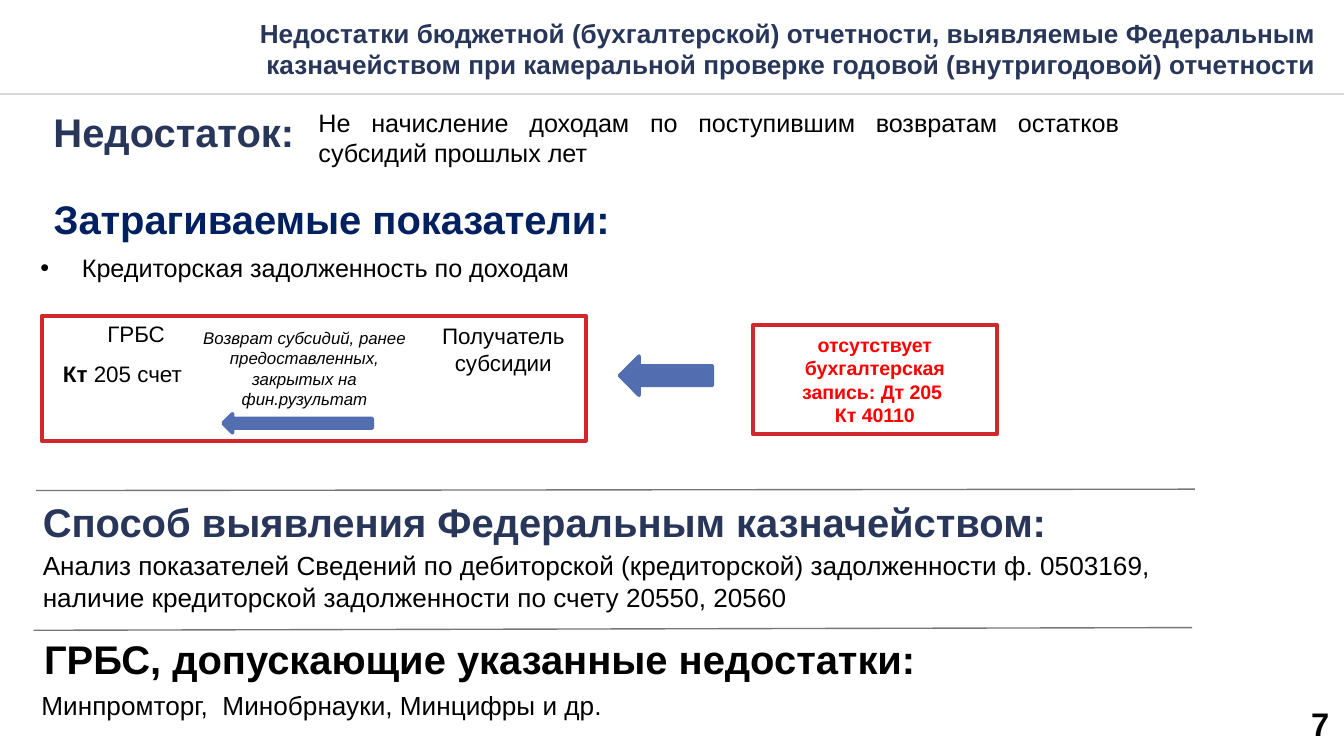
from dataclasses import dataclass

from lxml import etree
from pptx import Presentation
from pptx.dml.color import RGBColor
from pptx.enum.shapes import MSO_CONNECTOR as CONN, MSO_SHAPE as SHAPE
from pptx.enum.text import MSO_ANCHOR as ANCHOR, PP_ALIGN as ALIGN
from pptx.oxml.ns import qn
from pptx.util import Inches, Pt


@dataclass(frozen=True)
class Theme:
    font: str = "Arial"
    # Colours
    black: str = "000000"
    white: str = "FFFFFF"
    navy: str = "283659"
    deep_blue: str = "002060"
    blue: str = "526DB0"
    frame: str = "D1282E"
    alert: str = "FF0000"
    rule: str = "777777"
    header_rule: str = "D9D9D9"
    # Type sizes
    heading: float = 21.4
    number: float = 17.5
    body: float = 14
    lead: float = 13.5
    label: float = 12
    warning: float = 10.5
    note: float = 9


T = Theme()
PAD = (0.1, 0.05)
NO_PAD = (0, 0)


def rgb(value):
    return RGBColor.from_string(value)


def write(sp, paragraphs, size=T.body, color=T.black, align=ALIGN.LEFT,
          pad=PAD, wrap=True, anchor=ANCHOR.TOP, bullet=False, **style):
    """Fill a shape; a paragraph is a string or a list of (text, format) runs."""
    tf = sp.text_frame
    x, y = (Inches(v) for v in pad)
    frame = dict(margin_left=x, margin_right=x, margin_top=y, margin_bottom=y,
                 word_wrap=wrap, vertical_anchor=anchor)
    for name, value in frame.items():
        setattr(tf, name, value)
    for i, content in enumerate(paragraphs):
        p = tf.paragraphs[0] if i == 0 else tf.add_paragraph()
        p.alignment = align
        if bullet:
            add_bullet(p)
        runs = [(content, {})] if isinstance(content, str) else content
        for text, extra in runs:
            fmt = dict(name=T.font, size=Pt(size), **{**style, **extra})
            add_run(p, text, color, fmt)


def add_run(p, text, color, fmt):
    """Add formatted text; a newline becomes a line break."""
    for i, line in enumerate(text.split("\n")):
        if i:
            p.add_line_break()
        r = p.add_run()
        r.text = line
        for name, value in fmt.items():
            setattr(r.font, name, value)
        r.font.color.rgb = rgb(color)


def add_bullet(p, indent=0.31):
    pPr = p._p.get_or_add_pPr()
    pPr.set("marL", str(Inches(indent)))
    pPr.set("indent", str(-Inches(indent)))
    etree.SubElement(pPr, qn("a:buFont")).set("typeface", T.font)
    etree.SubElement(pPr, qn("a:buChar")).set("char", "•")


def add_text(s, box, *paragraphs, **fmt):
    sp = s.shapes.add_textbox(*map(Inches, box))
    write(sp, paragraphs, **fmt)


def add_heading(s, box, text, color=T.navy, **fmt):
    add_text(s, box, text, size=T.heading, color=color, bold=True, **fmt)


def add_box(s, kind, box, fill=None, line=None):
    sp = s.shapes.add_shape(kind, *map(Inches, box))
    sp.shadow.inherit = False
    if fill:
        sp.fill.solid()
        sp.fill.fore_color.rgb = rgb(fill)
    else:
        sp.fill.background()
    if line:
        sp.line.color.rgb = rgb(line)
        sp.line.width = Pt(2)
    else:
        sp.line.fill.background()
    return sp


def add_arrow(s, box):
    add_box(s, SHAPE.LEFT_ARROW, box, T.blue, T.blue)


def add_rule(s, x1, y1, x2, y2, color=T.rule, width=0.75):
    cx = s.shapes.add_connector(CONN.STRAIGHT, *map(Inches, (x1, y1, x2, y2)))
    cx.line.color.rgb = rgb(color)
    cx.line.width = Pt(width)
    etree.SubElement(cx._element.spPr, qn("a:effectLst"))


def add_header(s):
    add_rule(s, 0, 0.7, 10, 0.7, T.header_rule, 1)
    add_text(s, (1.66, 0.08, 8.23, 0.57),
             "Недостатки бюджетной (бухгалтерской) отчетности, выявляемые Федеральным "
             "казначейством при камеральной проверке годовой (внутригодовой) отчетности",
             color=T.navy, align=ALIGN.RIGHT, bold=True)


def add_defect(s):
    add_heading(s, (0.3, 0.75, 2.03, 0.46), "Недостаток:")
    add_text(s, (2.37, 0.8, 5.96, 0.35),
             "Не начисление доходам по поступившим возвратам остатков субсидий прошлых лет",
             size=T.lead, align=ALIGN.JUSTIFY, pad=NO_PAD)
    add_heading(s, (0.3, 1.4, 4.78, 0.46), "Затрагиваемые показатели:", T.deep_blue)
    add_text(s, (0.3, 1.88, 9.52, 0.45), "Кредиторская задолженность по доходам",
             size=T.lead, pad=NO_PAD, bullet=True)


def add_scheme(s):
    # Subsidy return: recipient to chief administrator
    add_box(s, SHAPE.RECTANGLE, (0.31, 2.35, 4.05, 0.93), line=T.frame)
    add_text(s, (0.7, 2.33, 0.7, 0.3), "ГРБС", size=T.label)
    add_text(s, (0.37, 2.63, 1.29, 0.3),
             [("Кт", {"bold": True}), (" 205 счет", {})], size=T.label)
    add_text(s, (1.41, 2.39, 1.71, 0.71),
             "Возврат субсидий, ранее предоставленных, закрытых на фин.рузультат",
             size=T.note, align=ALIGN.CENTER, italic=True)
    add_text(s, (3.09, 2.35, 1.31, 0.5), "Получатель субсидии",
             size=T.label, align=ALIGN.CENTER)
    add_arrow(s, (1.66, 3.08, 1.11, 0.14))

    # Missing accounting entry
    add_arrow(s, (4.61, 2.65, 0.69, 0.29))
    sp = add_box(s, SHAPE.RECTANGLE, (5.6, 2.42, 1.82, 0.81), T.white, T.frame)
    write(sp, ["отсутствует бухгалтерская запись: Дт 205 \nКт 40110"], size=T.warning,
          color=T.alert, align=ALIGN.CENTER, anchor=ANCHOR.MIDDLE, bold=True)


def add_detection(s):
    add_rule(s, 0.27, 3.65, 8.89, 3.64)
    add_heading(s, (0.22, 3.65, 7.75, 0.46),
                "Способ выявления Федеральным казначейством:", wrap=False)
    add_text(s, (0.22, 4.04, 9.32, 0.57),
             "Анализ показателей Сведений по дебиторской (кредиторской) задолженности ф. 0503169,",
             "наличие кредиторской задолженности по счету 20550, 20560")


def add_administrators(s):
    sp = add_box(s, SHAPE.RECTANGLE, (0.21, 5.08, 6.61, 0.34), T.white)
    write(sp, ["Минпромторг,  Минобрнауки, Минцифры и др."])
    add_rule(s, 0.25, 4.69, 8.87, 4.67)
    add_heading(s, (0.23, 4.67, 6.76, 0.46),
                "ГРБС, допускающие указанные недостатки:", T.black, wrap=False)


def main():
    prs = Presentation()
    # Widescreen 16:9
    prs.slide_width = Inches(10)
    prs.slide_height = prs.slide_width * 9 // 16
    s = prs.slides.add_slide(prs.slide_layouts[6])
    add_header(s)
    add_defect(s)
    add_scheme(s)
    add_detection(s)
    add_administrators(s)
    # Page number
    add_text(s, (7.59, 5.24, 2.3, 0.29), "7", size=T.number,
             align=ALIGN.RIGHT, pad=NO_PAD, bold=True)
    prs.save("out.pptx")


if __name__ == "__main__":
    main()
